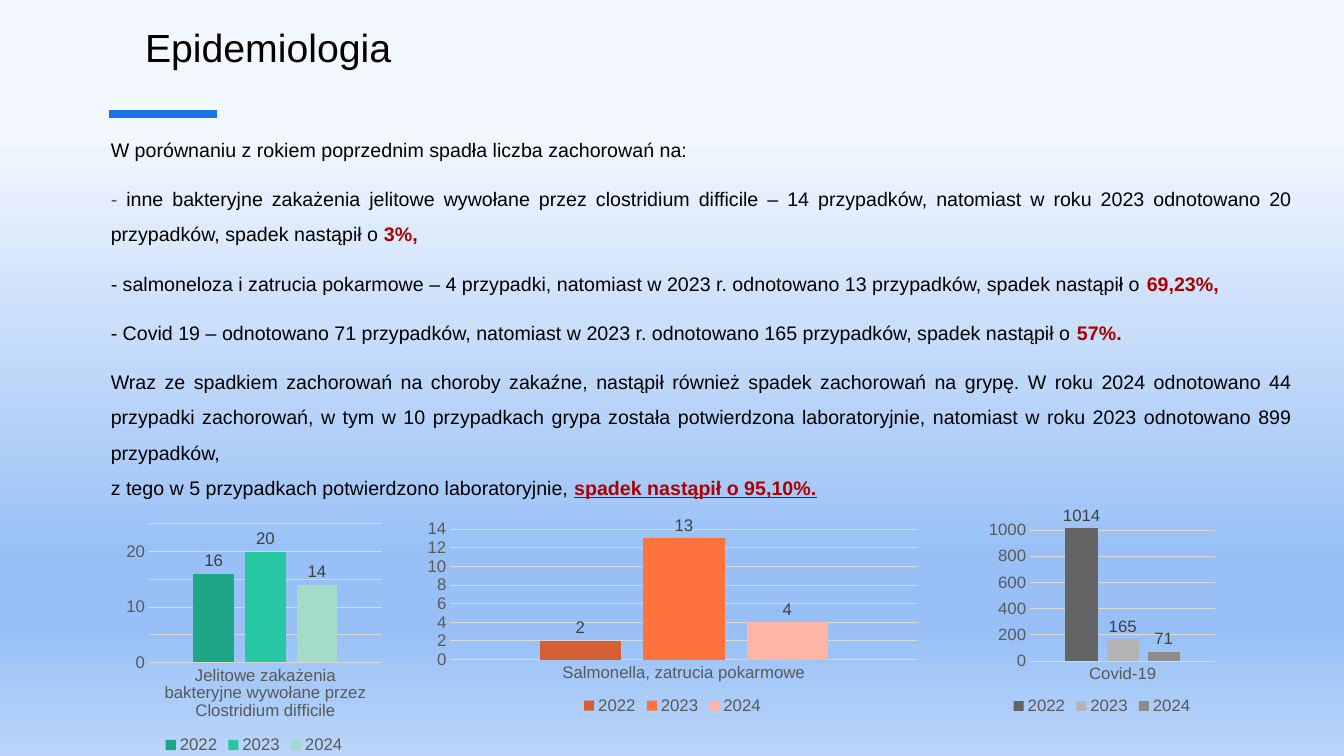
from lxml import etree
from pptx import Presentation
from pptx import util as u
from pptx.chart.data import CategoryChartData
from pptx.dml.color import RGBColor
from pptx.enum import chart as ch, shapes, text
from pptx.oxml.ns import qn

FONT = "Arial"
BLACK, RED, PURPLE = "000000", "AB0101", "7030A0"
GRID, AXIS_TEXT, LABEL_TEXT, ACCENT = "D9D9D9", "595959", "404040", "1973EB"
BACKGROUND = [(17, "F3F8FE"), (74, "98C0F6"), (83, "98C0F6"), (100, "BAD5F9")]
PLAIN = {"size": u.Pt(14), "name": FONT, "bold": False}
STRONG = PLAIN | {"bold": True}
UNDERLINED = STRONG | {"underline": True}
TITLE = [[("Epidemiologia", BLACK, {"size": u.Pt(28), "name": FONT})]]
BODY = [
    [("W porównaniu z rokiem poprzednim spadła liczba zachorowań na:", BLACK, PLAIN)],
    [("- ", PURPLE, PLAIN),
     ("inne bakteryjne zakażenia jelitowe wywołane przez clostridium difficile – 14 przypadków, "
      "natomiast w roku 2023 odnotowano 20 przypadków, spadek nastąpił o ", BLACK, PLAIN),
     ("3%,", RED, STRONG)],
    [("- salmoneloza i zatrucia pokarmowe – 4 przypadki, natomiast w 2023 r. odnotowano "
      "13 przypadków, spadek nastąpił o ", BLACK, PLAIN),
     ("69,23%,", RED, STRONG)],
    [("- Covid 19 – odnotowano 71 przypadków, natomiast w 2023 r. odnotowano 165 przypadków, "
      "spadek nastąpił o ", BLACK, PLAIN),
     ("57%.", RED, STRONG)],
    [("Wraz ze spadkiem zachorowań na choroby zakaźne, nastąpił również spadek zachorowań na "
      "grypę. W roku 2024 odnotowano 44 przypadki zachorowań, w tym w 10 przypadkach grypa "
      "została potwierdzona laboratoryjnie, natomiast w roku 2023 odnotowano 899 przypadków, \n"
      "z tego w 5 przypadkach potwierdzono laboratoryjnie, ", BLACK, PLAIN),
     ("spadek nastąpił o 95,10%.", RED, UNDERLINED)],
]
YEARS = ["2022", "2023", "2024"]
CHARTS = [
    ((1.2, 5.15, 2.64, 2.37), "Jelitowe zakażenia bakteryjne wywołane przez Clostridium difficile",
     [16, 20, 14], ["1FA686", "25C8A2", "A3DDC9"],
     {"minimum_scale": 0, "maximum_scale": 25}),
    ((4.14, 5.12, 5.06, 2.01), "Salmonella, zatrucia pokarmowe",
     [2, 13, 4], ["D35F32", "FE733C", "FEB5A6"], {}),
    ((9.76, 5.03, 2.34, 2.1), "Covid-19",
     [1014, 165, 71], ["646464", "B4B4B4", "8C8C8C"],
     {"minimum_scale": 0, "maximum_scale": 1100, "major_unit": 200}),
]


def rgb(value):
    return RGBColor.from_string(value)


def apply(target, values):
    for name, value in values.items():
        setattr(target, name, value)


def style_font(font, color, values):
    apply(font, values)
    font.color.rgb = rgb(color)


def style_line(line, color, width):
    line.color.rgb = rgb(color)
    line.width = u.Pt(width)


def paint_background(page):
    fill = page.background.fill
    fill.gradient()
    gradient = page.background._cSld.find(".//" + qn("a:gradFill"))
    stops = gradient.find(qn("a:gsLst"))
    for stop in list(stops):
        stops.remove(stop)
    for position, color in BACKGROUND:
        stop = etree.SubElement(stops, qn("a:gs"), pos=str(position * 1000))
        etree.SubElement(stop, qn("a:srgbClr"), val=color)
    gradient.find(qn("a:lin")).set("ang", str(90 * 60000))


def add_text(page, place, paragraphs, layout):
    frame = page.shapes.add_textbox(*map(u.Inches, place)).text_frame
    frame.word_wrap = True
    for index, spans in enumerate(paragraphs):
        para = frame.paragraphs[0] if index == 0 else frame.add_paragraph()
        apply(para, layout)
        para.space_before = u.Pt(10 if index else 0)
        for words, color, values in spans:
            for number, line in enumerate(words.split("\n")):
                if number:
                    para.add_line_break()
                span = para.add_run()
                span.text = line
                style_font(span.font, color, values)


def add_column_chart(page, place, category, values, colors, scale):
    data = CategoryChartData()
    data.categories = [category]
    for year, value in zip(YEARS, values):
        data.add_series(year, [value])
    chart = page.shapes.add_chart(
        ch.XL_CHART_TYPE.COLUMN_CLUSTERED, *map(u.Inches, place), data).chart
    small = {"size": u.Pt(12), "name": FONT, "bold": False}
    style_font(chart.font, BLACK, small | {"size": u.Pt(10)})
    apply(chart, {"has_title": False, "has_legend": True})
    apply(chart.legend, {"position": ch.XL_LEGEND_POSITION.BOTTOM, "include_in_layout": False})
    style_font(chart.legend.font, AXIS_TEXT, small)
    for axis in (chart.category_axis, chart.value_axis):
        apply(axis, {"major_tick_mark": ch.XL_TICK_MARK.NONE,
                     "minor_tick_mark": ch.XL_TICK_MARK.NONE})
        style_font(axis.tick_labels.font, AXIS_TEXT, small)
    style_line(chart.category_axis.format.line, GRID, 0.75)
    chart.value_axis.format.line.fill.background()
    style_line(chart.value_axis.major_gridlines.format.line, GRID, 0.75)
    apply(chart.value_axis, scale)
    plot = chart.plots[0]
    apply(plot, {"gap_width": 219, "overlap": -27, "vary_by_categories": False})
    for series, color in zip(plot.series, colors):
        series.format.fill.solid()
        series.format.fill.fore_color.rgb = rgb(color)
        labels = series.data_labels
        apply(labels, {"show_value": True, "position": ch.XL_LABEL_POSITION.OUTSIDE_END})
        style_font(labels.font, LABEL_TEXT, small)


def main():
    deck = Presentation()
    apply(deck, {"slide_width": u.Inches(13.33), "slide_height": u.Inches(7.5)})
    page = deck.slides.add_slide(deck.slide_layouts[6])
    paint_background(page)
    accent = page.shapes.add_connector(
        shapes.MSO_CONNECTOR.STRAIGHT, *map(u.Inches, (1.08, 1.13, 2.15, 1.13)))
    style_line(accent.line, ACCENT, 6)
    etree.SubElement(accent._element.spPr, qn("a:effectLst"))
    add_text(page, (1.34, 0.18, 11.33, 0.79), TITLE, {"alignment": text.PP_ALIGN.LEFT})
    add_text(page, (1, 1.2, 11.92, 3.93), BODY,
             {"alignment": text.PP_ALIGN.JUSTIFY, "line_spacing": 1.5})
    for details in CHARTS:
        add_column_chart(page, *details)
    deck.save("out.pptx")


if __name__ == "__main__":
    main()
